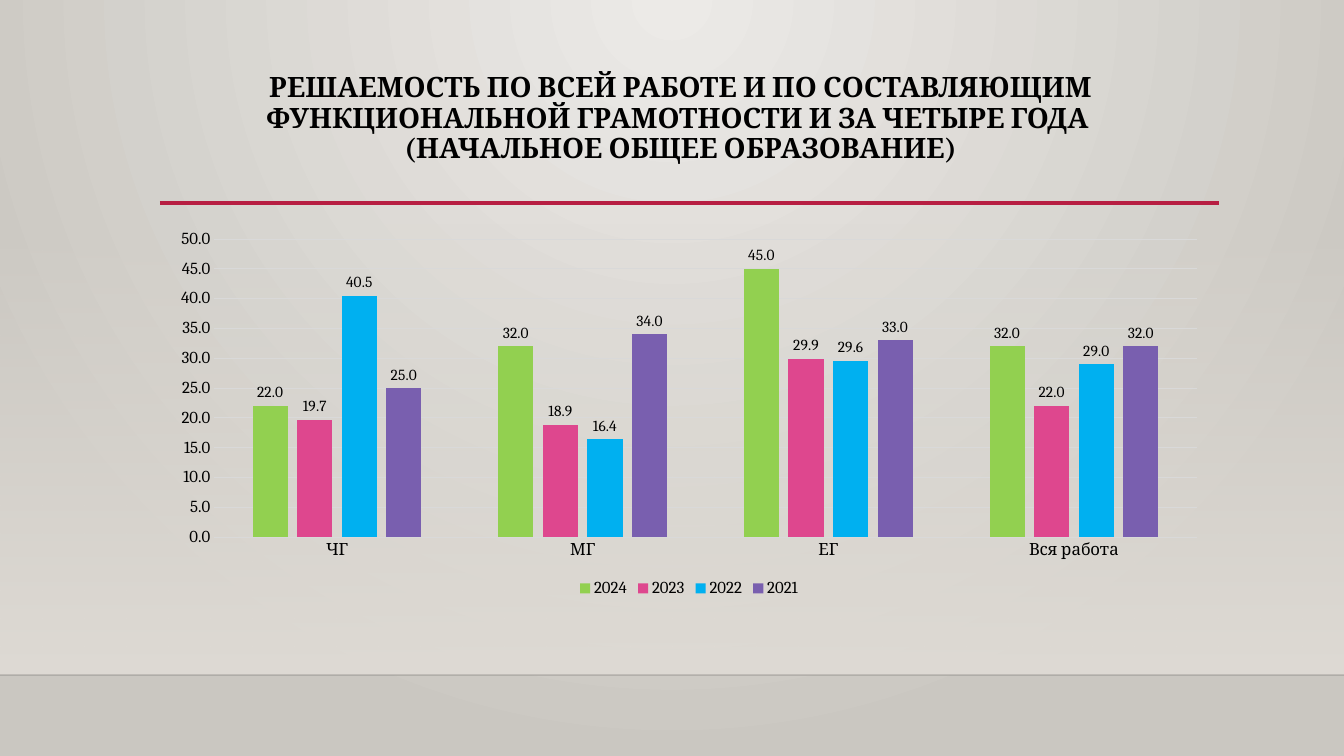
"""Build a slide with a column chart of task completion rates over four years."""
from lxml import etree
from pptx import Presentation
from pptx.chart.data import CategoryChartData
from pptx.dml.color import RGBColor
from pptx.enum.chart import XL_CHART_TYPE, XL_LABEL_POSITION, XL_LEGEND_POSITION, XL_TICK_MARK
from pptx.enum.shapes import MSO_CONNECTOR, MSO_SHAPE
from pptx.enum.text import MSO_ANCHOR, MSO_AUTO_SIZE, PP_ALIGN
from pptx.oxml.ns import qn
from pptx.util import Emu, Pt

COLUMNS = XL_CHART_TYPE.COLUMN_CLUSTERED
OUTSIDE_END = XL_LABEL_POSITION.OUTSIDE_END
LEGEND_BOTTOM = XL_LEGEND_POSITION.BOTTOM
NO_TICK = XL_TICK_MARK.NONE
STRAIGHT = MSO_CONNECTOR.STRAIGHT
RECTANGLE = MSO_SHAPE.RECTANGLE
MIDDLE = MSO_ANCHOR.MIDDLE
NO_AUTOFIT = MSO_AUTO_SIZE.NONE
CENTER = PP_ALIGN.CENTER

EMU_PER_PX = 914400 / 100.8
WIDTH, HEIGHT = 1344, 756
FLOOR = 675

TITLE = (
    "РЕШАЕМОСТЬ ПО ВСЕЙ РАБОТЕ И ПО СОСТАВЛЯЮЩИМ "
    "ФУНКЦИОНАЛЬНОЙ ГРАМОТНОСТИ И ЗА ЧЕТЫРЕ ГОДА ",
    "(НАЧАЛЬНОЕ ОБЩЕЕ ОБРАЗОВАНИЕ)",
)
CATEGORIES = ("ЧГ", "МГ", "ЕГ", "Вся работа")
YEARS = (
    ("2024", (22, 32, 45, 32), "92D050"),
    ("2023", (19.7, 18.9, 29.9, 22), "DE478E"),
    ("2022", (40.5, 16.4, 29.6, 29), "00B0F0"),
    ("2021", (25, 34, 33, 32), "795FAF"),
)


def px(*lengths):
    return [Emu(round(n * EMU_PER_PX)) for n in lengths]


def rgb(value):
    return RGBColor.from_string(value)


def set_alpha(color, percent):
    etree.SubElement(color, qn("a:alpha"), val=str(percent * 1000))


class SlideBuilder:
    font = "Cambria"
    ink = "000000"
    grid = "D9D9D9"

    def __init__(self, prs):
        self.s = prs.slides.add_slide(prs.slide_layouts[5])

    def style(self, font, size, bold=False):
        font.name = self.font
        font.size = Pt(size)
        font.bold = bold
        font.color.rgb = rgb(self.ink)

    def gradient(self, fill, start, end):
        fill.gradient()
        fill.gradient_angle = 270
        for stop, position, color in zip(fill.gradient_stops, (0, 1), (start, end)):
            stop.position = position
            stop.color.rgb = rgb(color)

    def background(self, center, edge):
        self.gradient(self.s.background.fill, center, edge)
        grad = self.s._element.find(".//" + qn("p:bgPr")).find(qn("a:gradFill"))
        grad.remove(grad.find(qn("a:lin")))
        path = etree.SubElement(grad, qn("a:path"), path="circle")
        etree.SubElement(path, qn("a:fillToRect"), l="43000", t="0", r="43000", b="100000")

    def fading_panel(self, x, y, w, h, color):
        sp = self.s.shapes.add_shape(RECTANGLE, *px(x, y, w, h))
        sp.shadow.inherit = False
        sp.line.fill.background()
        self.gradient(sp.fill, color, color)
        set_alpha(sp._element.spPr.find(".//" + qn("a:srgbClr")), 0)

    def rule(self, x1, x2, y, color, width, alpha=100):
        line = self.s.shapes.add_connector(STRAIGHT, *px(x1, y, x2, y))
        line.line.color.rgb = rgb(color)
        line.line.width = Pt(width)
        sp_pr = line._element.spPr
        if alpha < 100:
            set_alpha(sp_pr.find(".//" + qn("a:srgbClr")), alpha)
        etree.SubElement(sp_pr, qn("a:effectLst"))

    def title(self, x, y, w, h, lines):
        sp = self.s.shapes.title
        sp.left, sp.top, sp.width, sp.height = px(x, y, w, h)
        tf = sp.text_frame
        tf.word_wrap = True
        tf.auto_size = NO_AUTOFIT
        tf.vertical_anchor = MIDDLE
        p = tf.paragraphs[0]
        for i, line in enumerate(lines):
            if i:
                p.add_line_break()
            p.add_run().text = line
        p.alignment = CENTER
        p.line_spacing = 0.9
        self.style(p.font, 20, bold=True)

    def column_chart(self, x, y, w, h, categories, series):
        data = CategoryChartData(number_format="0.0")
        data.categories = categories
        for name, values, _ in series:
            data.add_series(name, values)
        chart = self.s.shapes.add_chart(COLUMNS, *px(x, y, w, h), data).chart
        self.style(chart.font, 12)
        chart.has_title = False
        chart.has_legend = True
        chart.legend.position = LEGEND_BOTTOM
        chart.legend.include_in_layout = False
        self.style(chart.legend.font, 12)
        self.axes(chart)
        plot = chart.plots[0]
        plot.gap_width = 219
        plot.overlap = -27
        plot.vary_by_categories = False
        for column, (_, _, color) in zip(plot.series, series):
            column.format.fill.solid()
            column.format.fill.fore_color.rgb = rgb(color)
            labels = column.data_labels
            labels.show_value = True
            labels.number_format = "0.0"
            labels.number_format_is_linked = False
            labels.position = OUTSIDE_END
            self.style(labels.font, 11)

    def axes(self, chart):
        cat, val = chart.category_axis, chart.value_axis
        for axis in (cat, val):
            axis.major_tick_mark = axis.minor_tick_mark = NO_TICK
            self.style(axis.tick_labels.font, 12)
        val.minimum_scale, val.maximum_scale, val.major_unit = 0, 50, 5
        val.tick_labels.number_format = "0.0"
        val.tick_labels.number_format_is_linked = False
        val.format.line.fill.background()
        val.has_major_gridlines = True
        for line in (cat.format.line, val.major_gridlines.format.line):
            line.color.rgb = rgb(self.grid)
            line.width = Pt(0.75)


def main():
    prs = Presentation()
    prs.slide_width, prs.slide_height = px(WIDTH, HEIGHT)
    slide = SlideBuilder(prs)
    slide.background("ECEAE7", "CAC7C1")
    slide.fading_panel(0, 223, WIDTH, FLOOR - 223, "DFDBD5")
    slide.rule(0, WIDTH, FLOOR, "000001", 1, alpha=20)
    slide.rule(160, 1219, 203, "B71E42", 2.5)
    slide.title(169, 43, 1023, 152, TITLE)
    slide.column_chart(160, 222, 1058, 380, CATEGORIES, YEARS)
    prs.save("out.pptx")


if __name__ == "__main__":
    main()
